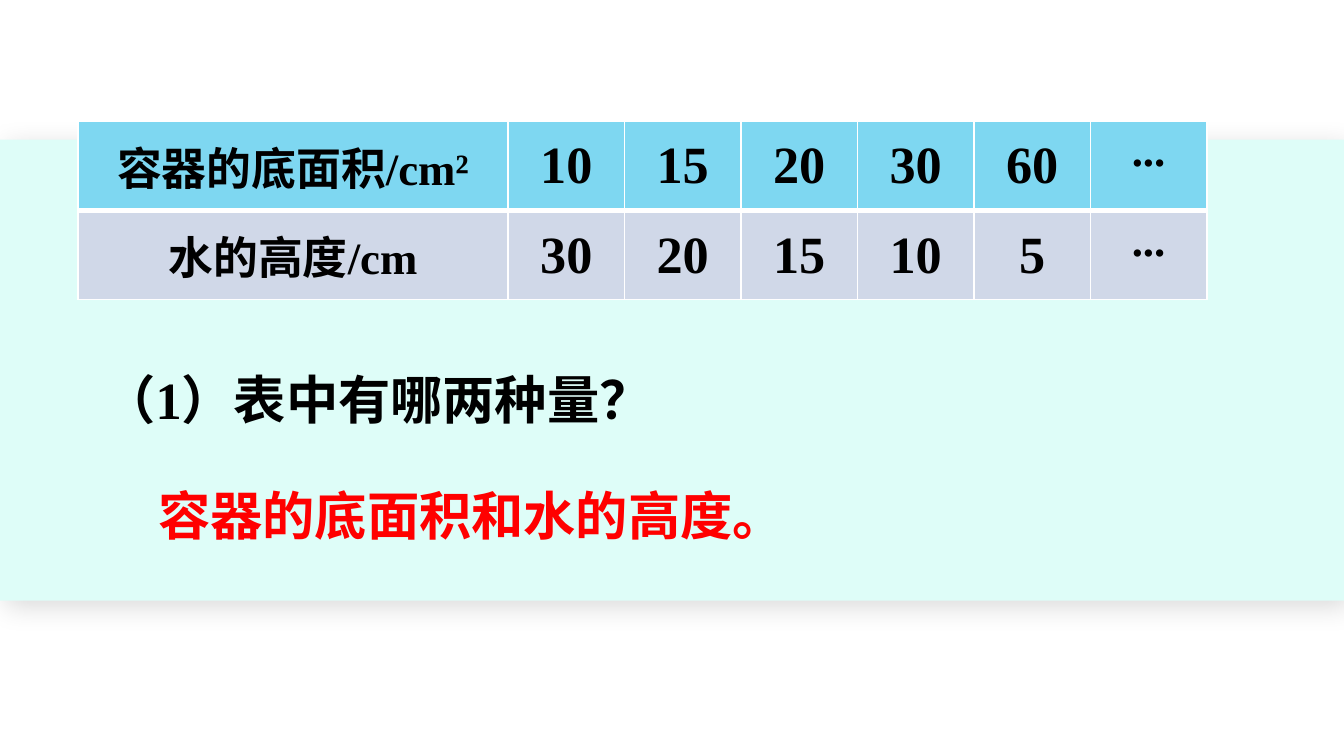
from lxml import etree
from pptx import Presentation
from pptx.dml.color import RGBColor
from pptx.enum.shapes import MSO_SHAPE
from pptx.enum.text import MSO_ANCHOR, MSO_AUTO_SIZE, PP_ALIGN
from pptx.oxml.ns import qn
from pptx.util import Inches, Pt

RECTANGLE = MSO_SHAPE.RECTANGLE
TOP, MIDDLE = MSO_ANCHOR.TOP, MSO_ANCHOR.MIDDLE
LEFT, CENTER = PP_ALIGN.LEFT, PP_ALIGN.CENTER
NO_FIT = MSO_AUTO_SIZE.NONE
CHINESE_FONT, LATIN_FONT = "Noto Sans CJK SC", "Times New Roman"
COLORS = {"band": "DEFDF8", "header": "7ED7F1", "row": "D0D8E8",
          "border": "FFFFFF", "text": "000000", "answer": "FF0000",
          "shadow": "000000"}

TABLE_ROWS = [
    (("容器的底面积", "/cm²"), "10", "15", "20", "30", "60", "..."),
    (("水的高度", "/cm"), "30", "20", "15", "10", "5", "..."),
]
ROW_FILLS = ["header", "row"]
ROW_HEIGHTS = [0.67, 0.66]
TABLE_WIDTH, LABEL_WIDTH = 8.4, 3.2
QUESTION = "（1）表中有哪两种量？"
ANSWER = "容器的底面积和水的高度。"


def rgb(name):
    return RGBColor.from_string(COLORS[name])


def add_node(parent, tag, **attributes):
    node = etree.SubElement(parent, qn(tag))
    for key, value in attributes.items():
        node.set(key, str(value))
    return node


def format_run(run, size, font, color="text"):
    run.font.size = Pt(size)
    run.font.bold = True
    run.font.name = font
    run.font.color.rgb = rgb(color)
    add_node(run.font._element, "a:ea", typeface=CHINESE_FONT)


def add_band(slide, slide_width):
    band = slide.shapes.add_shape(RECTANGLE, 0, Inches(1.04), slide_width, Inches(3.43))
    band.fill.solid()
    band.fill.fore_color.rgb = rgb("band")
    band.line.fill.background()
    effects = add_node(band._element.spPr, "a:effectLst")
    shadow = add_node(effects, "a:outerShdw", blurRad=Pt(15), dist=Pt(5),
                      dir=45 * 60000, algn="tl", rotWithShape=0)
    color = add_node(shadow, "a:srgbClr", val=COLORS["shadow"])
    add_node(color, "a:alpha", val=15000)
    slide.shapes._spTree.insert(2, band._element)


def set_borders(cell, top, bottom):
    properties = cell._tc.get_or_add_tcPr()
    widths = {"a:lnL": 1, "a:lnR": 1, "a:lnT": top, "a:lnB": bottom}
    for position, (tag, width) in enumerate(widths.items()):
        line = add_node(properties, tag, w=Pt(width))
        fill = add_node(line, "a:solidFill")
        add_node(fill, "a:srgbClr", val=COLORS["border"])
        properties.insert(position, line)


def fill_cell(cell, content, fill):
    cell.fill.solid()
    cell.fill.fore_color.rgb = rgb(fill)
    cell.margin_left = cell.margin_right = Inches(0.07)
    cell.margin_top = cell.margin_bottom = Inches(0.04)
    cell.vertical_anchor = TOP if content == "..." else MIDDLE
    paragraph = cell.text_frame.paragraphs[0]
    paragraph.alignment = CENTER
    spacing = add_node(paragraph._p.get_or_add_pPr(), "a:spcBef")
    add_node(spacing, "a:spcPct", val=20000)
    if isinstance(content, tuple):
        parts = zip(content, (CHINESE_FONT, LATIN_FONT))
        size = 24
    else:
        parts = [(content, LATIN_FONT)]
        size = 24 if content == "..." else 28
    for text, font in parts:
        run = paragraph.add_run()
        run.text = text
        format_run(run, size, font)


def add_quantity_table(slide):
    column_count = len(TABLE_ROWS[0])
    value_width = (TABLE_WIDTH - LABEL_WIDTH) / (column_count - 1)
    table = slide.shapes.add_table(
        len(TABLE_ROWS), column_count, Inches(0.58), Inches(0.9),
        Inches(TABLE_WIDTH), Inches(sum(ROW_HEIGHTS))).table
    for index, column in enumerate(table.columns):
        column.width = Inches(LABEL_WIDTH if index == 0 else value_width)
    for row_index, contents in enumerate(TABLE_ROWS):
        table.rows[row_index].height = Inches(ROW_HEIGHTS[row_index])
        top, bottom = (1, 3) if row_index == 0 else (3, 1)
        for column_index, content in enumerate(contents):
            cell = table.cell(row_index, column_index)
            fill_cell(cell, content, ROW_FILLS[row_index])
            set_borders(cell, top, bottom)


def write_line(shape, text, font, color, anchor, line_spacing):
    frame = shape.text_frame
    frame.text = text
    frame.word_wrap = True
    frame.auto_size = NO_FIT
    frame.vertical_anchor = anchor
    paragraph = frame.paragraphs[0]
    paragraph.alignment = LEFT
    paragraph.line_spacing = line_spacing
    format_run(paragraph.runs[0], 28, font, color)


def main():
    presentation = Presentation()
    presentation.slide_width = Inches(10)
    presentation.slide_height = presentation.slide_width * 9 // 16
    slide = presentation.slides.add_slide(presentation.slide_layouts[5])
    add_band(slide, presentation.slide_width)
    add_quantity_table(slide)

    question = slide.shapes.title
    question.left, question.top = Inches(0.67), Inches(2.68)
    question.width, question.height = Inches(4.38), Inches(0.57)
    write_line(question, QUESTION, LATIN_FONT, "text", MIDDLE, 1.0)

    answer = slide.shapes.add_textbox(Inches(1.08), Inches(3.31), Inches(5.61), Inches(0.81))
    write_line(answer, ANSWER, CHINESE_FONT, "answer", TOP, 1.5)
    presentation.save("out.pptx")


if __name__ == "__main__":
    main()
